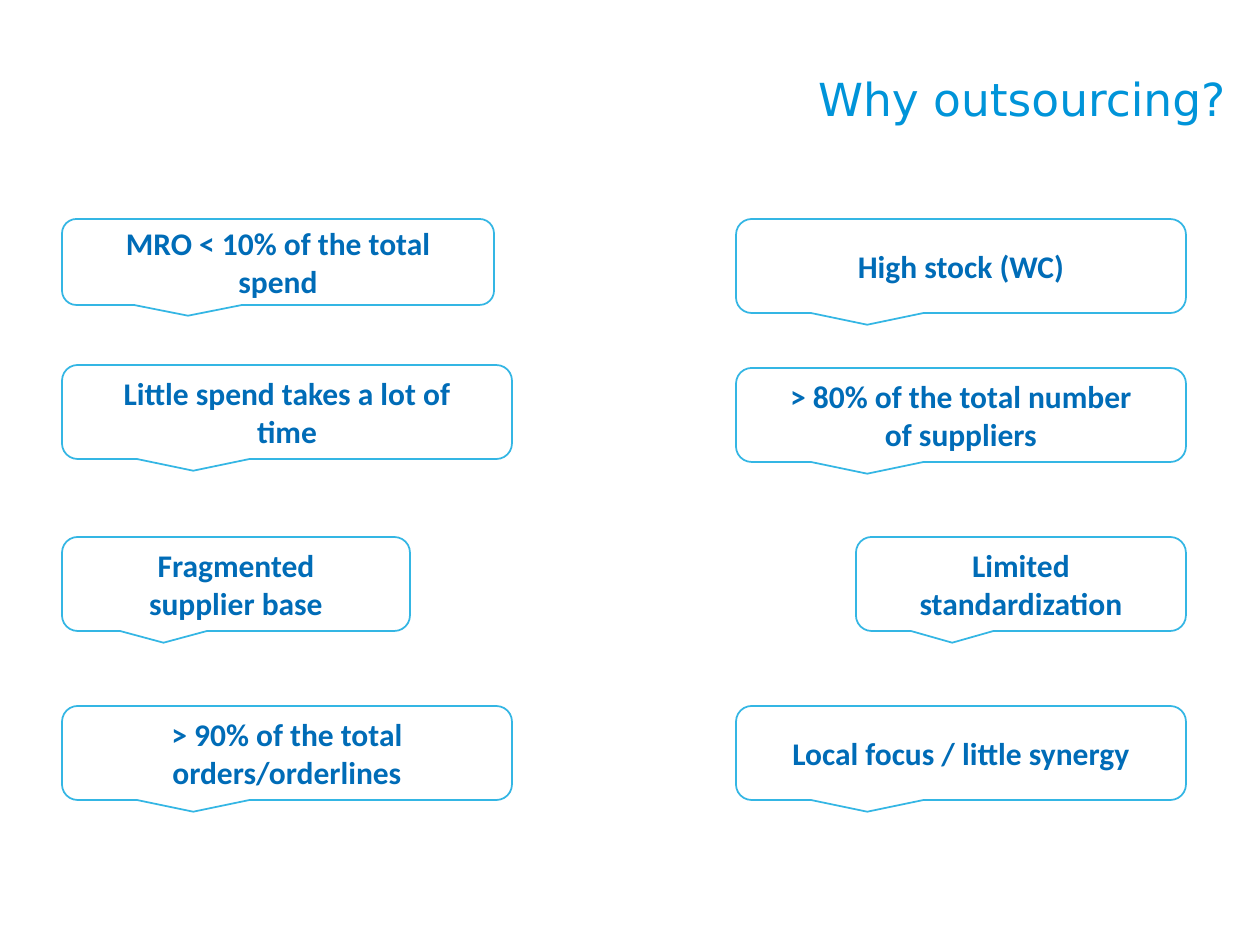
from dataclasses import dataclass

from pptx import Presentation
from pptx.dml.color import RGBColor
from pptx.enum.shapes import MSO_SHAPE
from pptx.enum.text import MSO_ANCHOR, PP_ALIGN
from pptx.util import Pt

EMU_PER_INCH = 914400
PX_PER_INCH = 126

WHITE = RGBColor(0xFF, 0xFF, 0xFF)
TITLE_BLUE = RGBColor(0x00, 0x94, 0xD9)
TEXT_BLUE = RGBColor(0x00, 0x6C, 0xB7)
OUTLINE_BLUE = RGBColor(0x34, 0xB6, 0xE4)

LEFT_EDGE = 62
RIGHT_EDGE = 1186
WIDE = 450
TALL = 94
INSET = 49
MARGINS = ("margin_left", "margin_top", "margin_right", "margin_bottom")

TITLE_FONT = {"name": "DejaVu Sans", "size": Pt(26), "bold": False}
REASON_FONT = {"name": "Calibri", "size": Pt(18), "bold": True}


@dataclass(frozen=True)
class Reason:
    text: str
    top: int
    width: int = WIDE
    height: int = TALL


LEFT_REASONS = (
    Reason("MRO < 10% of the total spend", 219, width=432, height=86),
    Reason("Little spend takes a lot of time", 365),
    Reason("Fragmented supplier base", 537, width=348),
    Reason("> 90% of the total orders/orderlines", 706),
)
RIGHT_REASONS = (
    Reason("High stock (WC)", 219),
    Reason("> 80% of the total number of suppliers", 368),
    Reason("Limited standardization", 537, width=330),
    Reason("Local focus / little synergy", 706),
)


def px(length: int) -> int:
    return round(length * EMU_PER_INCH / PX_PER_INCH)


def write_text(shape, text: str, font: dict, color: RGBColor,
               alignment: PP_ALIGN, anchor: MSO_ANCHOR, inset: int) -> None:
    frame = shape.text_frame
    frame.word_wrap = True
    frame.vertical_anchor = anchor
    for margin in MARGINS:
        setattr(frame, margin, px(inset))
    para = frame.paragraphs[0]
    para.alignment = alignment
    para.space_before = Pt(0)
    span = para.add_run()
    span.text = text
    for name, value in font.items():
        setattr(span.font, name, value)
    span.font.color.rgb = color


def add_title(page, text: str) -> None:
    title = page.shapes.title
    place = {"left": 333, "top": 71, "width": 893, "height": 84}
    for name, value in place.items():
        setattr(title, name, px(value))
    write_text(title, text, TITLE_FONT, TITLE_BLUE,
               PP_ALIGN.RIGHT, MSO_ANCHOR.TOP, inset=0)


def add_reason(page, reason: Reason, left: int) -> None:
    box = page.shapes.add_shape(
        MSO_SHAPE.ROUNDED_RECTANGULAR_CALLOUT,
        px(left), px(reason.top), px(reason.width), px(reason.height))
    box.shadow.inherit = False
    box.fill.solid()
    box.fill.fore_color.rgb = WHITE
    box.line.color.rgb = OUTLINE_BLUE
    box.line.width = Pt(1)
    write_text(box, reason.text, REASON_FONT, TEXT_BLUE,
               PP_ALIGN.CENTER, MSO_ANCHOR.MIDDLE, INSET)


def main() -> None:
    deck = Presentation()
    deck.slide_width, deck.slide_height = px(1260), px(945)
    page = deck.slides.add_slide(deck.slide_layouts.get_by_name("Title Only"))
    add_title(page, "Why outsourcing?")
    for reason in LEFT_REASONS:
        add_reason(page, reason, LEFT_EDGE)
    for reason in RIGHT_REASONS:
        add_reason(page, reason, RIGHT_EDGE - reason.width)
    deck.save("out.pptx")


if __name__ == "__main__":
    main()
